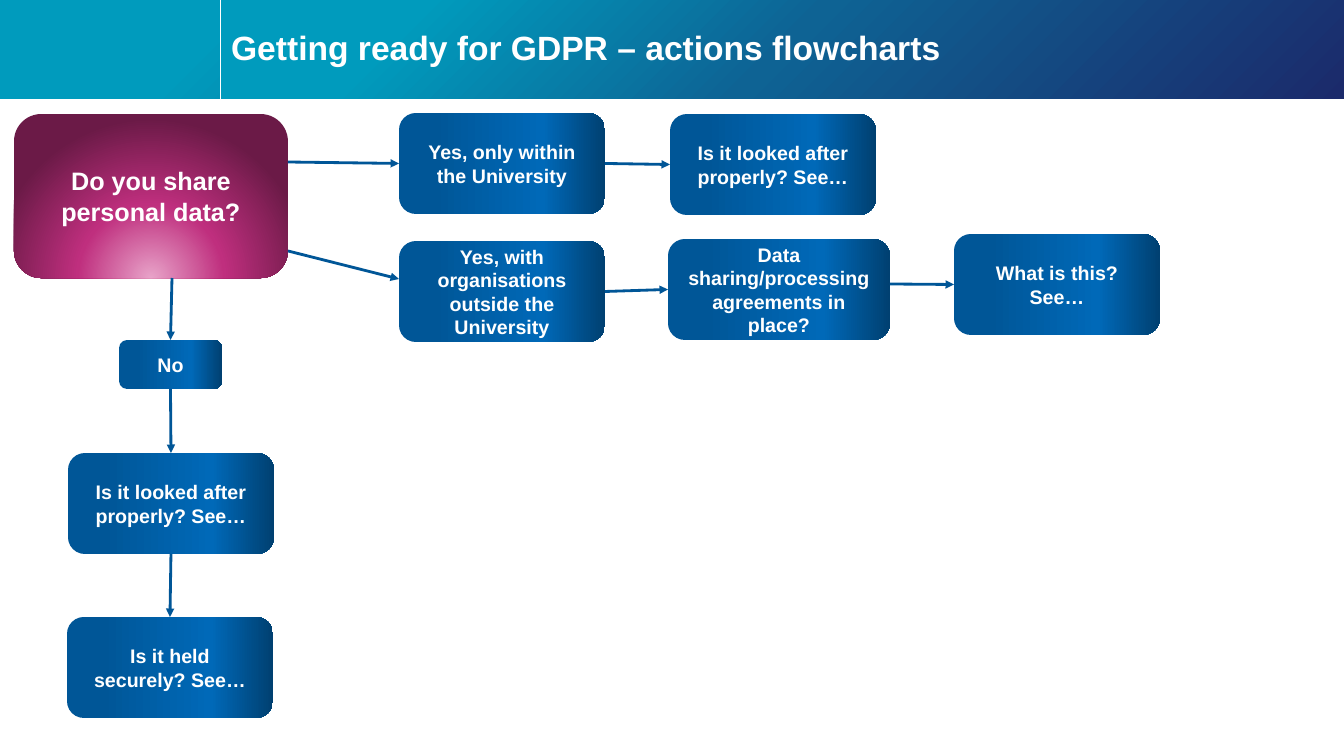
from lxml import etree
from pptx import Presentation
from pptx import util as u
from pptx.dml.color import RGBColor
from pptx.enum import shapes, text
from pptx.oxml import parse_xml
from pptx.oxml.ns import nsdecls, qn

PX = 914400 / 100.8
HEADER = [(17, "009BBD"), (50, "0E6394"), (100, "1B2A6B")]
BLUE = [(17, "005697"), (70, "0069B8"), (100, "004071")]
PINK = [(0, "E8A3C9"), (46, "BF2F7E"), (100, "6B1A47")]
LINEAR = '<a:lin ang="{}" scaled="0"/>'
GLOW = ('<a:path path="circle"><a:fillToRect l="50000" t="130000" '
        'r="50000" b="-30000"/></a:path>')


def px(*lengths):
    return [u.Emu(round(n * PX)) for n in lengths]


def add_box(kind, at, stops, direction):
    """Add a borderless shape with a gradient fill."""
    sp = s.shapes.add_shape(kind, *px(*at))
    sp.shadow.inherit = False
    sp.line.fill.background()
    stop_xml = "".join(f'<a:gs pos="{pos * 1000}"><a:srgbClr val="{c}"/></a:gs>'
                       for pos, c in stops)
    sp._element.spPr.find(qn("a:prstGeom")).addnext(parse_xml(
        f'<a:gradFill {nsdecls("a")} rotWithShape="1"><a:gsLst>{stop_xml}</a:gsLst>'
        f'{direction}</a:gradFill>'))
    return sp


prs = Presentation()
prs.slide_width, prs.slide_height = px(1344, 756)
s = prs.slides.add_slide(prs.slide_layouts[5])

# Header band, divided by a thin line
for left in (0, 220):
    add_box(shapes.MSO_SHAPE.RECTANGLE, (left, 0, 1344 - left, 99), HEADER,
            LINEAR.format(45 * 60000))
divider = s.shapes.add_connector(shapes.MSO_CONNECTOR.STRAIGHT, *px(220, 0, 220, 99))
divider.line.color.rgb = RGBColor.from_string("FFFFFF")
divider.line.width = u.Pt(0.5)
etree.SubElement(divider._element.spPr, qn("a:effectLst"))

# Title, brought in front of the band
title = s.shapes.title
title.left, title.top, title.width, title.height = px(221, 11, 1123, 77)
s.shapes._spTree.append(title._element)
tf = title.text_frame
tf.text = "Getting ready for GDPR – actions flowcharts"
tf.auto_size = text.MSO_AUTO_SIZE.NONE
tf.vertical_anchor = text.MSO_ANCHOR.MIDDLE
p = tf.paragraphs[0]
p.alignment = text.PP_ALIGN.LEFT
p.line_spacing = 0.9
font = p.runs[0].font
font.name, font.size, font.bold = "Arial", u.Pt(24), True
font.color.rgb = RGBColor.from_string("FFFFFF")

# Flowchart boxes: name, position, wording
boxes = {}
for name, at, words in [
    ("question", (14, 114, 274, 164), "Do you share personal data?"),
    ("inside", (399, 113, 206, 101), "Yes, only within the University"),
    ("inside care", (670, 114, 206, 101), "Is it looked after properly? See…"),
    ("outside", (399, 241, 206, 101), "Yes, with organisations outside the University"),
    ("agreements", (668, 239, 222, 101), "Data sharing/processing agreements in place?"),
    ("what", (954, 234, 206, 101), "What is this? See…"),
    ("no", (119, 340, 103, 49), "No"),
    ("no care", (68, 453, 206, 101), "Is it looked after properly? See…"),
    ("secure", (67, 617, 206, 101), "Is it held securely? See…"),
]:
    main = name == "question"
    sp = add_box(shapes.MSO_SHAPE.ROUNDED_RECTANGLE, at, PINK if main else BLUE,
                 GLOW if main else LINEAR.format(0))
    tf = sp.text_frame
    tf.text = words
    tf.word_wrap = True
    tf.vertical_anchor = text.MSO_ANCHOR.MIDDLE
    p = tf.paragraphs[0]
    p.alignment = text.PP_ALIGN.CENTER
    font = p.runs[0].font
    font.name, font.size, font.bold = "Arial", u.Pt(18 if main else 14), True
    font.color.rgb = RGBColor.from_string("FFFFFF")
    boxes[name] = sp

# Arrows: each end is a free point or the (box, side) it joins
for start, end in [
    ((288, 162), ("inside", 1)),
    ((288, 251), (399, 279)),
    ((172, 278), ("no", 0)),
    (("inside", 3), ("inside care", 1)),
    (("outside", 3), ("agreements", 1)),
    ((890, 284), ("what", 1)),
    (("no", 2), ("no care", 0)),
    (("no care", 2), ("secure", 0)),
]:
    free = [e if e[0] not in boxes else (0, 0) for e in (start, end)]
    arrow = s.shapes.add_connector(shapes.MSO_CONNECTOR.STRAIGHT, *px(*free[0], *free[1]))
    if start[0] in boxes:
        arrow.begin_connect(boxes[start[0]], start[1])
    if end[0] in boxes:
        arrow.end_connect(boxes[end[0]], end[1])
    arrow.line.color.rgb = RGBColor.from_string("005697")
    arrow.line.width = u.Pt(2)
    etree.SubElement(arrow.line._get_or_add_ln(), qn("a:tailEnd"), type="triangle")
    etree.SubElement(arrow._element.spPr, qn("a:effectLst"))

prs.save("out.pptx")
